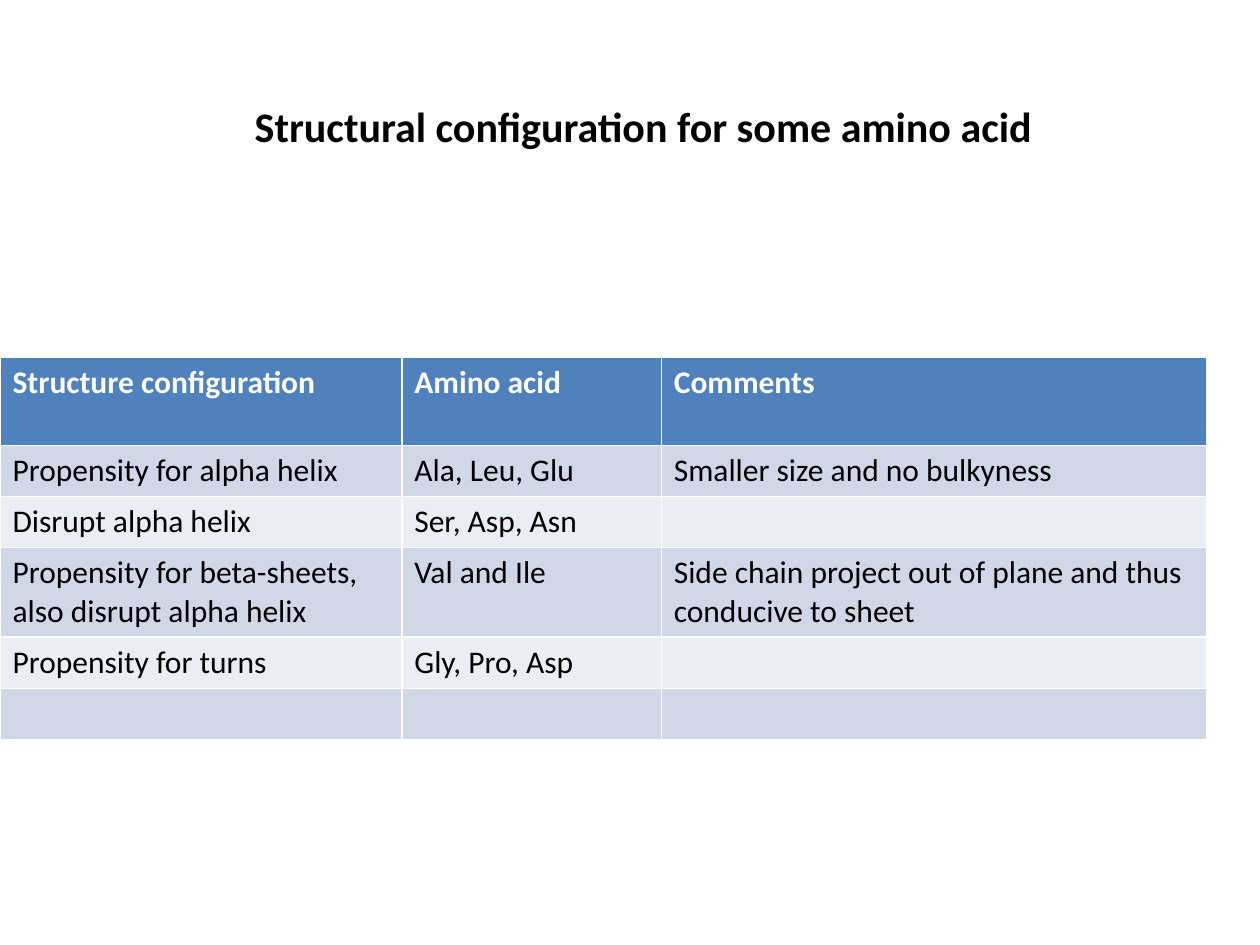
from pptx import Presentation
from pptx.dml.color import RGBColor
from pptx.enum.text import MSO_ANCHOR, MSO_AUTO_SIZE, PP_ALIGN
from pptx.util import Cm, Pt

TOP = MSO_ANCHOR.TOP
NO_AUTOFIT = MSO_AUTO_SIZE.NONE
LEFT = PP_ALIGN.LEFT
TITLE_ONLY = 5

THEME = {
    "title": {"name": "Calibri", "size": Pt(24), "bold": True, "color": "000000"},
    "header": {"name": "Calibri", "size": Pt(18), "bold": True, "color": "FFFFFF"},
    "body": {"name": "Calibri", "size": Pt(18), "bold": False, "color": "000000"},
    "header_fill": "4F81BD",
    "band_fills": ("E9EDF4", "D0D8E8"),
}

COLUMN_WIDTHS = (8.1, 5.23, 11)
ROWS = (
    (1.78, ("Structure configuration", "Amino acid", "Comments")),
    (1.03, ("Propensity for alpha helix", "Ala, Leu, Glu", "Smaller size and no bulkyness")),
    (1.03, ("Disrupt alpha helix", "Ser, Asp, Asn", "")),
    (1.8, ("Propensity for beta-sheets, also disrupt alpha helix", "Val and Ile",
           "Side chain project out of plane and thus conducive to sheet")),
    (1.03, ("Propensity for turns", "Gly, Pro, Asp", "")),
    (1.03, ("", "", "")),
)


def format_font(font, values):
    for name, value in values.items():
        if name == "color":
            font.color.rgb = RGBColor.from_string(value)
        else:
            setattr(font, name, value)


presentation = Presentation()
presentation.slide_width = Cm(25.4)
presentation.slide_height = Cm(19.05)
slide = presentation.slides.add_slide(presentation.slide_layouts[TITLE_ONLY])

# Title
title = slide.shapes.title
title.left, title.top, title.width, title.height = Cm(4.88), Cm(1.9), Cm(16.33), Cm(1.28)
title.text_frame.text = "Structural configuration for some amino acid"
frame_format = {"vertical_anchor": TOP, "word_wrap": False, "auto_size": NO_AUTOFIT}
for name, value in frame_format.items():
    setattr(title.text_frame, name, value)
title_paragraph = title.text_frame.paragraphs[0]
title_paragraph.alignment = LEFT
format_font(title_paragraph.runs[0].font, THEME["title"])

# Amino acid table
table = slide.shapes.add_table(
    len(ROWS), len(COLUMN_WIDTHS), Cm(0), Cm(7.2),
    Cm(sum(COLUMN_WIDTHS)), Cm(sum(height for height, _ in ROWS)),
).table
for column, width in zip(table.columns, COLUMN_WIDTHS):
    column.width = Cm(width)

for row_index, (height, texts) in enumerate(ROWS):
    row = table.rows[row_index]
    row.height = Cm(height)
    is_header = row_index == 0
    fill = THEME["header_fill"] if is_header else THEME["band_fills"][row_index % 2]
    for cell, text in zip(row.cells, texts):
        cell.fill.solid()
        cell.fill.fore_color.rgb = RGBColor.from_string(fill)
        if text:
            cell.text = text
            run = cell.text_frame.paragraphs[0].runs[0]
            format_font(run.font, THEME["header" if is_header else "body"])

presentation.save("out.pptx")
